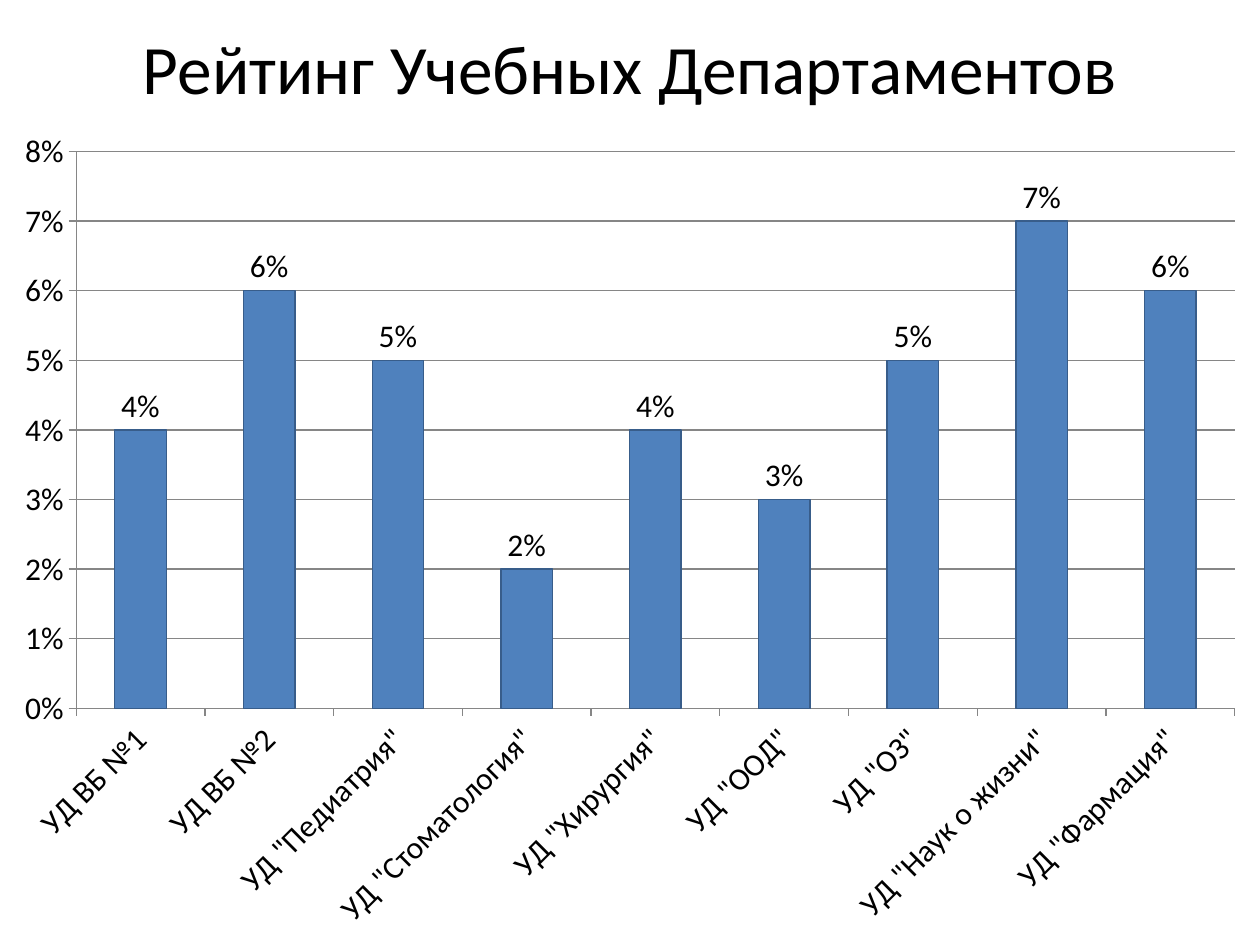
from dataclasses import dataclass

from pptx import Presentation
from pptx.chart.axis import CategoryAxis, ValueAxis
from pptx.chart.data import CategoryChartData
from pptx.dml.color import RGBColor
from pptx.enum.chart import XL_CHART_TYPE, XL_LABEL_POSITION, XL_TICK_MARK
from pptx.enum.text import MSO_ANCHOR, MSO_AUTO_SIZE, PP_ALIGN
from pptx.slide import Slide
from pptx.util import Inches, Pt

COLUMNS = XL_CHART_TYPE.COLUMN_CLUSTERED
LABEL_ABOVE = XL_LABEL_POSITION.OUTSIDE_END
TICK_OUTSIDE = XL_TICK_MARK.OUTSIDE
ANCHOR_MIDDLE = MSO_ANCHOR.MIDDLE
NO_AUTOFIT = MSO_AUTO_SIZE.NONE
ALIGN_CENTER = PP_ALIGN.CENTER
PERCENT_FORMAT = "0%"
LABEL_ROTATION = -45 * 60000


@dataclass(frozen=True)
class Theme:
    font: str = "Calibri"
    title_size: float = 39.6
    chart_size: float = 18
    line_width: float = 0.75
    text: RGBColor = RGBColor(0, 0, 0)
    bar: RGBColor = RGBColor(0x4F, 0x81, 0xBD)
    bar_line: RGBColor = RGBColor(0x38, 0x5D, 0x8A)
    grid: RGBColor = RGBColor(0x86, 0x86, 0x86)


@dataclass(frozen=True)
class Rating:
    department: str
    share: float


THEME = Theme()
RATINGS = [
    Rating("УД ВБ №1", 0.04),
    Rating("УД ВБ №2", 0.06),
    Rating('УД "Педиатрия"', 0.05),
    Rating('УД "Стоматология"', 0.02),
    Rating('УД "Хирургия"', 0.04),
    Rating('УД "ООД"', 0.03),
    Rating('УД "ОЗ"', 0.05),
    Rating('УД "Наук о жизни"', 0.07),
    Rating('УД "Фармация"', 0.06),
]


def write_title(slide: Slide, text: str) -> None:
    title = slide.shapes.title
    title.left, title.top = Inches(0.5), Inches(0.3)
    title.width, title.height = Inches(9), Inches(0.46)
    frame = title.text_frame
    frame.auto_size = NO_AUTOFIT
    frame.vertical_anchor = ANCHOR_MIDDLE
    para = frame.paragraphs[0]
    para.alignment = ALIGN_CENTER
    span = para.add_run()
    span.text = text
    span.font.name = THEME.font
    span.font.size = Pt(THEME.title_size)
    span.font.color.rgb = THEME.text


def style_axis(axis: CategoryAxis | ValueAxis) -> None:
    axis.major_tick_mark = TICK_OUTSIDE
    axis.format.line.color.rgb = THEME.grid
    axis.format.line.width = Pt(THEME.line_width)
    axis.tick_labels.font.size = Pt(THEME.chart_size)


def add_rating_chart(slide: Slide, ratings: list[Rating]) -> None:
    data = CategoryChartData(number_format=PERCENT_FORMAT)
    data.categories = [rating.department for rating in ratings]
    data.add_series("Series 1", [rating.share for rating in ratings])
    chart = slide.shapes.add_chart(
        COLUMNS, Inches(0), Inches(0.92), Inches(10), Inches(6.58), data
    ).chart
    chart.has_legend = False
    chart.has_title = False
    chart.font.name = THEME.font
    chart.font.size = Pt(THEME.chart_size)
    chart.font.color.rgb = THEME.text

    for axis in (chart.category_axis, chart.value_axis):
        style_axis(axis)
    for body in chart.element.xpath(".//c:catAx/c:txPr/a:bodyPr"):
        body.set("rot", str(LABEL_ROTATION))

    shares = chart.value_axis
    shares.minimum_scale, shares.maximum_scale = 0, 0.08
    shares.major_unit = 0.01
    shares.tick_labels.number_format = PERCENT_FORMAT
    shares.tick_labels.number_format_is_linked = False
    shares.has_major_gridlines = True
    shares.major_gridlines.format.line.color.rgb = THEME.grid
    shares.major_gridlines.format.line.width = Pt(THEME.line_width)

    plot = chart.plots[0]
    plot.gap_width = 150
    plot.vary_by_categories = False
    bars = plot.series[0]
    bars.format.fill.solid()
    bars.format.fill.fore_color.rgb = THEME.bar
    bars.format.line.color.rgb = THEME.bar_line
    bars.format.line.width = Pt(THEME.line_width)
    labels = bars.data_labels
    labels.show_value = True
    labels.number_format = PERCENT_FORMAT
    labels.number_format_is_linked = False
    labels.position = LABEL_ABOVE
    labels.font.size = Pt(THEME.chart_size)


def main() -> None:
    deck = Presentation()
    deck.slide_width, deck.slide_height = Inches(10), Inches(7.5)
    page = deck.slides.add_slide(deck.slide_layouts[5])
    add_rating_chart(page, RATINGS)
    write_title(page, "Рейтинг Учебных Департаментов")
    deck.save("out.pptx")


if __name__ == "__main__":
    main()
